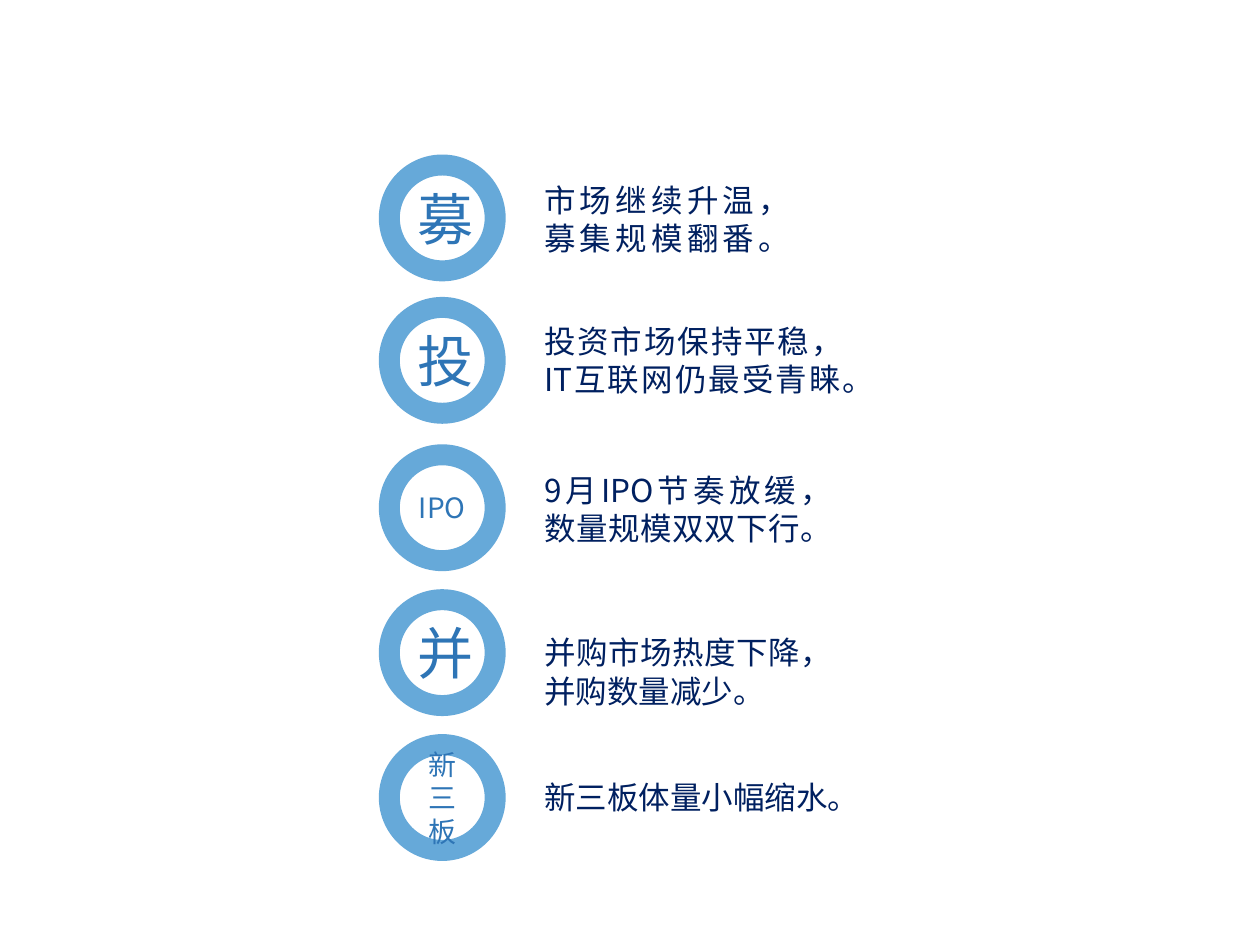
from lxml.etree import SubElement
from pptx import Presentation
from pptx.dml.color import RGBColor
from pptx.enum.shapes import MSO_SHAPE
from pptx.enum.text import MSO_ANCHOR, MSO_AUTO_SIZE, PP_ALIGN
from pptx.oxml.ns import qn
from pptx.util import Inches, Pt

RING_LEFT, RING_SIZE = 3.09, 0.84
NOTE_LEFT = 4.22

# ring top, label, label size, note box (top, width, height), note paragraphs
TOPICS = [
    (1.31, "募", 32, (1.38, 1.9, 0.71), ["市场继续升温，募集规模翻番。"]),
    (2.44, "投", 32, (2.5, 2.57, 0.71), ["投资市场保持平稳，IT互联网仍最受青睐。"]),
    (3.61, "IPO", 16, (3.68, 2.23, 0.71), ["9月IPO节奏放缓，", "数量规模双双下行。"]),
    (4.76, "并", 32, (4.97, 2.23, 0.71), ["并购市场热度下降，", "并购数量减少。"]),
    (5.91, "新三板", 16, (6.12, 2.95, 0.4), ["新三板体量小幅缩水。"]),
]


def color(value):
    return RGBColor.from_string(value)


def add_span(para, text, size, face, ink):
    """Add a run whose Latin and East Asian fonts are the same."""
    span = para.add_run()
    span.text = text
    span.font.size = Pt(size)
    span.font.color.rgb = color(ink)
    span.font.name = face
    props = span.font._element
    props.set("lang", "zh-CN")
    SubElement(props, qn("a:ea")).set("typeface", face)


def add_ring(page, left, top, diameter, label, size):
    ring = page.shapes.add_shape(MSO_SHAPE.OVAL, Inches(left), Inches(top),
                                 Inches(diameter), Inches(diameter))
    ring.shadow.inherit = False
    ring.fill.background()
    ring.line.width = Pt(12)
    ring.line.color.rgb = color("0070C0")
    tint = ring.line._ln.find(".//" + qn("a:srgbClr"))
    SubElement(tint, qn("a:alpha")).set("val", "60000")
    frame = ring.text_frame
    frame.word_wrap = True
    frame.vertical_anchor = MSO_ANCHOR.MIDDLE
    para = frame.paragraphs[0]
    para.alignment = PP_ALIGN.CENTER
    if len(label) > 1:
        para.line_spacing = Pt(size * 1.2)
    add_span(para, label, size, "Noto Sans CJK JP", "2E75B6")


def add_note(page, left, top, width, height, lines):
    box = page.shapes.add_textbox(Inches(left), Inches(top),
                                  Inches(width), Inches(height))
    frame = box.text_frame
    frame.word_wrap = True
    frame.auto_size = MSO_AUTO_SIZE.SHAPE_TO_FIT_TEXT
    for index, line in enumerate(lines):
        para = frame.add_paragraph() if index else frame.paragraphs[0]
        para.alignment = PP_ALIGN.JUSTIFY
        para.line_spacing = Pt(22)
        add_span(para, line, 18, "Noto Sans CJK SC", "002060")


def main():
    deck = Presentation()
    deck.slide_width, deck.slide_height = Inches(10), Inches(7.5)
    page = deck.slides.add_slide(deck.slide_layouts[6])
    for ring_top, label, size, note_box, lines in TOPICS:
        add_ring(page, RING_LEFT, ring_top, RING_SIZE, label, size)
        add_note(page, NOTE_LEFT, *note_box, lines)
    deck.save("out.pptx")


if __name__ == "__main__":
    main()
